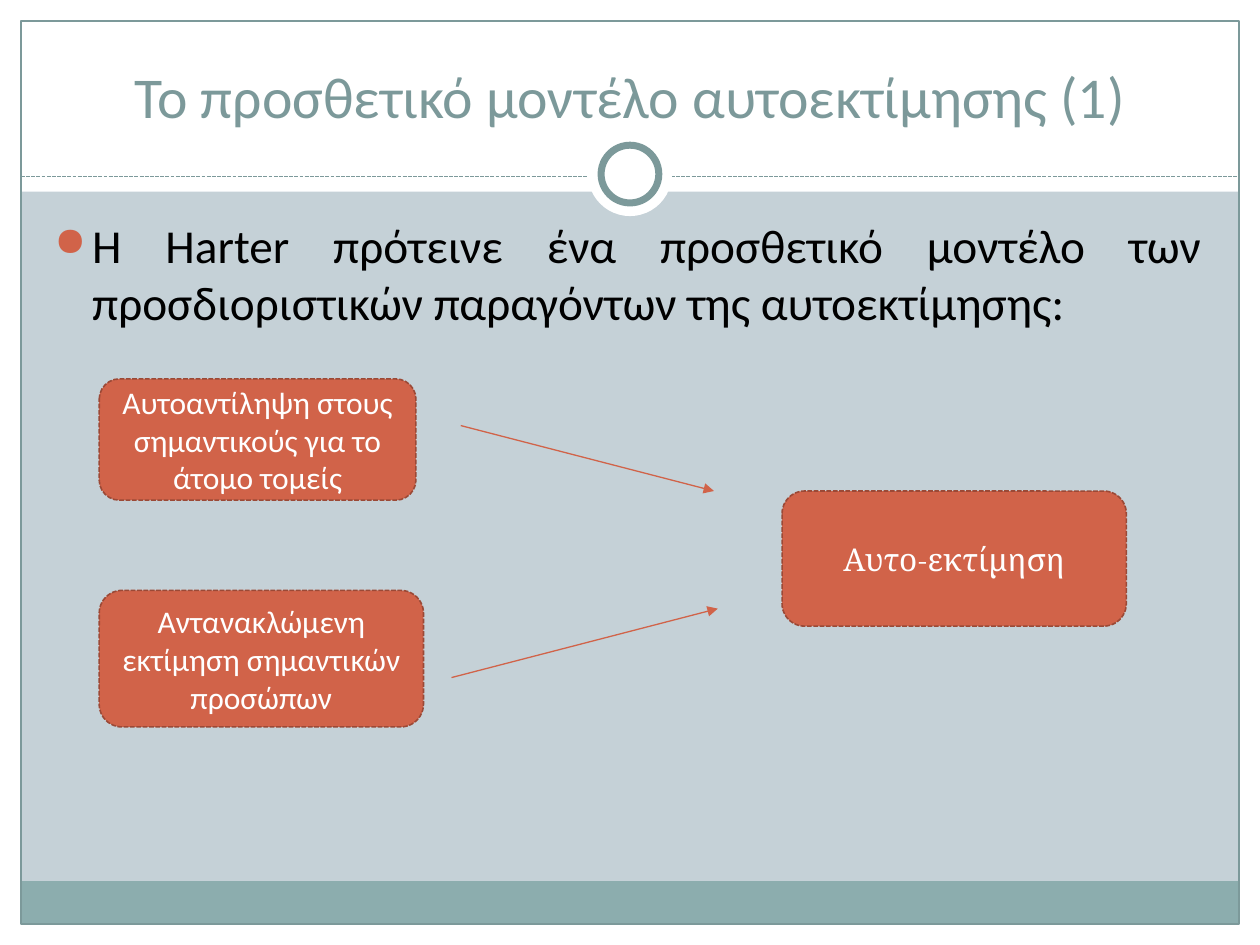
"""Build a slide on the additive model of self-esteem."""
from lxml.etree import SubElement
from pptx import Presentation
from pptx.dml.color import RGBColor
from pptx.enum.dml import MSO_LINE as Dash
from pptx.enum.shapes import MSO_CONNECTOR as Connector, MSO_SHAPE as Shape
from pptx.enum.text import MSO_ANCHOR as Anchor, MSO_AUTO_SIZE as AutoSize, PP_ALIGN as Align
from pptx.oxml.ns import qn
from pptx.util import Pt

WIDTH, HEIGHT, MARGIN = 720, 540, 12


def color(value):
    return RGBColor.from_string(value)


class SlideBuilder:
    white, black, teal, band = "FFFFFF", "000000", "7C999A", "8CADAE"
    accent, border, background = "D16349", "9B4936", "C5D1D7"
    font = "Calibri"

    def __init__(self, presentation):
        self.slide = presentation.slides.add_slide(presentation.slide_layouts[5])
        fill = self.slide.background.fill
        fill.solid()
        fill.fore_color.rgb = color(self.background)

    def stroke(self, line, line_color, width, dash=None):
        line.color.rgb = color(line_color)
        line.width = Pt(width)
        if dash:
            line.dash_style = dash

    def shape(self, kind, box, fill=None, line=None, width=0.75, dash=None):
        shape = self.slide.shapes.add_shape(kind, *map(Pt, box))
        shape.shadow.inherit = False
        if fill:
            shape.fill.solid()
            shape.fill.fore_color.rgb = color(fill)
        else:
            shape.fill.background()
        if line:
            self.stroke(shape.line, line, width, dash)
        else:
            shape.line.fill.background()
        return shape

    def line(self, start, end, line_color, dash=None, arrow=False):
        connector = self.slide.shapes.add_connector(Connector.STRAIGHT, *map(Pt, start + end))
        self.stroke(connector.line, line_color, 0.75, dash)
        properties = connector.element.spPr
        if arrow:
            SubElement(properties.find(qn("a:ln")), qn("a:tailEnd"), type="triangle")
        SubElement(properties, qn("a:effectLst"))

    def text(self, shape, text, size, text_color, align, anchor, font=None):
        frame = shape.text_frame
        frame.text = text
        frame.word_wrap = True
        frame.auto_size = AutoSize.NONE
        frame.vertical_anchor = anchor
        paragraph = frame.paragraphs[0]
        paragraph.alignment = align
        style = paragraph.runs[0].font
        style.name = font or self.font
        style.size = Pt(size)
        style.color.rgb = color(text_color)
        return paragraph

    def title(self, text, box):
        title = self.slide.shapes.title
        title.left, title.top, title.width, title.height = map(Pt, box)
        self.text(title, text, 33, self.teal, Align.CENTER, Anchor.BOTTOM)
        self.slide.shapes.element.append(title.element)

    def bullet(self, text, box):
        shape = self.slide.shapes.add_textbox(*map(Pt, box))
        paragraph = self.text(shape, text, 27, self.black, Align.JUSTIFY, Anchor.TOP)
        properties = paragraph._p.get_or_add_pPr()
        indent = Pt(21.6)
        properties.set("marL", str(indent))
        properties.set("indent", str(-indent))
        bullet_color = SubElement(properties, qn("a:buClr"))
        SubElement(bullet_color, qn("a:srgbClr"), val=self.accent)
        SubElement(properties, qn("a:buSzPct"), val="85000")
        SubElement(properties, qn("a:buChar"), char="●")

    def node(self, text, box, font=None):
        shape = self.shape(Shape.ROUNDED_RECTANGLE, box, self.accent, self.border, 0.9, Dash.SQUARE_DOT)
        self.text(shape, text, 18, self.white, Align.CENTER, Anchor.MIDDLE, font)

    def circle(self, center, diameter, line=None):
        left, top = (position - diameter / 2 for position in center)
        self.shape(Shape.OVAL, (left, top, diameter, diameter), self.white, line, 4)

    def frame(self):
        inner_width, inner_height = WIDTH - 2 * MARGIN, HEIGHT - 2 * MARGIN
        for box in (
            (0, HEIGHT - MARGIN, WIDTH, MARGIN),
            (0, 0, WIDTH, 109.5),
            (0, 0, MARGIN, HEIGHT),
            (WIDTH - MARGIN, 0, MARGIN, HEIGHT),
        ):
            self.shape(Shape.RECTANGLE, box, self.white)
        self.shape(Shape.RECTANGLE, (MARGIN, 503.5, inner_width, 24.5), self.band)
        self.shape(Shape.RECTANGLE, (MARGIN, MARGIN, inner_width, inner_height), line=self.teal)
        self.line((MARGIN, 100.8), (WIDTH - MARGIN, 100.8), self.teal, Dash.SQUARE_DOT)
        center = (WIDTH / 2, 99.5)
        self.circle(center, 48)
        self.circle(center, 33, self.teal)


def main():
    presentation = Presentation()
    presentation.slide_width, presentation.slide_height = Pt(WIDTH), Pt(HEIGHT)
    builder = SlideBuilder(presentation)
    builder.frame()
    builder.title("Το προσθετικό μοντέλο αυτοεκτίμησης (1)", (24, 18, 672, 60))
    builder.bullet(
        "Η Harter πρότεινε ένα προσθετικό μοντέλο των προσδιοριστικών παραγόντων της αυτοεκτίμησης:",
        (24, 120, 669.6, 360),
    )
    builder.node("Αυτοαντίληψη στους σημαντικούς για το άτομο τομείς", (56.7, 216.5, 181, 69.3))
    builder.node("Αντανακλώμενη εκτίμηση σημαντικών προσώπων", (56.7, 337.4, 185.3, 78))
    builder.line((263.3, 243.2), (408, 280.6), builder.accent, arrow=True)
    builder.line((258, 387.2), (410.2, 347.8), builder.accent, arrow=True)
    builder.node("Αυτο-εκτίμηση", (446.9, 280.6, 196.7, 77.2), "Cambria")
    presentation.save("out.pptx")


if __name__ == "__main__":
    main()
